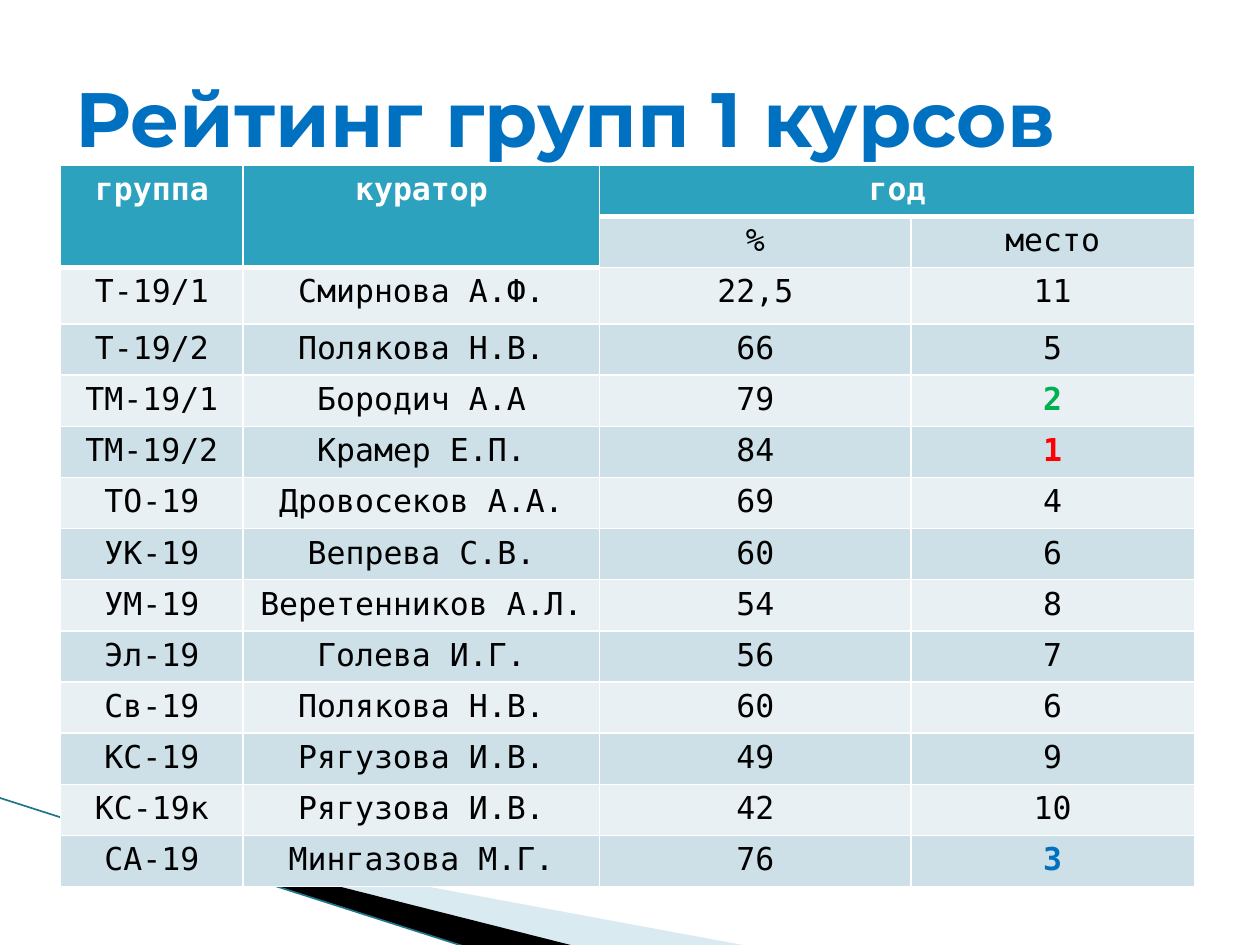
"""Builds the slide that ranks first-year groups by percentage and place."""
from lxml import etree
from pptx import Presentation
from pptx import util as u
from pptx.dml.color import RGBColor
from pptx.enum import shapes, text
from pptx.oxml.ns import qn

TITLE = "Рейтинг групп 1 курсов"
HEADER = ["группа", "куратор", "год", ""]
SUBHEADER = ["", "", "%", "место"]
RATING = [
    ("Т-19/1", "Смирнова А.Ф.", "22,5", "11"),
    ("Т-19/2", "Полякова Н.В.", "66", "5"),
    ("ТМ-19/1", "Бородич А.А", "79", "2"),
    ("ТМ-19/2", "Крамер Е.П.", "84", "1"),
    ("ТО-19", "Дровосеков А.А.", "69", "4"),
    ("УК-19", "Вепрева С.В.", "60", "6"),
    ("УМ-19", "Веретенников А.Л.", "54", "8"),
    ("Эл-19", "Голева И.Г.", "56", "7"),
    ("Св-19", "Полякова Н.В.", "60", "6"),
    ("КС-19", "Рягузова И.В.", "49", "9"),
    ("КС-19к", "Рягузова И.В.", "42", "10"),
    ("СА-19", "Мингазова М.Г.", "76", "3"),
]
MERGES = [((0, 0), (1, 0)), ((0, 1), (1, 1)), ((0, 2), (0, 3))]
COLUMNS = [1.45, 2.83, 2.47, 2.25]
TABLE_BOX = (0.48, 1.31, 9, 5.73)
FIRST_GROUP_ROW, FIRST_GROUP_HEIGHT = 2, 0.45
RIBBONS = [
    ((0.78, 5.47, 4.16, 1.58),
     [(0.55, 6.51), (5.95, 7.51), (4.56, 7.51), (0.55, 6.5)], "ribbon", 40),
    ((-0.06, 6.33, 4.16, 0.92),
     [(0.53, 6.49), (4.57, 7.51), (3.72, 7.52), (0.54, 6.5)], "text", 100),
]
EDGE = (-0.01, 6.33, 3.71, 7.52)
THEME = {
    "title_font": "Montserrat", "title_size": 44, "title": "0070C0",
    "table_font": "DejaVu Sans Mono", "table_size": 18,
    "header": "2DA2BF", "header_text": "FFFFFF", "text": "000000",
    "bands": ("E8F0F4", "CDE0E8"), "border": "FFFFFF",
    "places": {"1": "FF0000", "2": "00B050", "3": "0070C0"},
    "ribbon": "A0CBDC", "edge": "1F768C",
}


def add_run(paragraph, words, font, size, color, bold):
    run = paragraph.add_run()
    run.text = words
    run.font.name, run.font.size, run.font.bold = font, u.Pt(size), bold
    run.font.color.rgb = RGBColor.from_string(color)


def set_frame(ribbon, frame):
    left, top, width, height = map(u.Inches, frame)
    shift_x, shift_y = ribbon.left - left, ribbon.top - top
    outline = ribbon._element.spPr.find(".//" + qn("a:pathLst"))[0]
    outline.set("w", str(width))
    outline.set("h", str(height))
    for corner in outline.iter(qn("a:pt")):
        corner.set("x", str(int(corner.get("x")) + shift_x))
        corner.set("y", str(int(corner.get("y")) + shift_y))
    ribbon.left, ribbon.top, ribbon.width, ribbon.height = left, top, width, height


def add_ribbon(slide, frame, points, color, opacity):
    corners = [(u.Inches(x), u.Inches(y)) for x, y in points]
    builder = slide.shapes.build_freeform(*corners[0])
    builder.add_line_segments(corners[1:])
    ribbon = builder.convert_to_shape()
    set_frame(ribbon, frame)
    ribbon.shadow.inherit = False
    ribbon.line.fill.background()
    ribbon.fill.solid()
    ribbon.fill.fore_color.rgb = RGBColor.from_string(THEME[color])
    if opacity < 100:
        tint = ribbon._element.spPr.find(".//" + qn("a:srgbClr"))
        etree.SubElement(tint, qn("a:alpha"), val=str(opacity * 1000))


def add_edge(slide):
    edge = slide.shapes.add_connector(
        shapes.MSO_CONNECTOR.STRAIGHT, *map(u.Inches, EDGE))
    edge.line.width = u.Pt(0.95)
    edge.line.color.rgb = RGBColor.from_string(THEME["edge"])
    etree.SubElement(edge._element.spPr, qn("a:effectLst"))


def add_borders(cell, bottom):
    properties = cell._tc.get_or_add_tcPr()
    for side, points in (("L", 1), ("R", 1), ("T", 1), ("B", bottom)):
        border = etree.SubElement(properties, qn("a:ln" + side), w=str(u.Pt(points)))
        fill = etree.SubElement(border, qn("a:solidFill"))
        etree.SubElement(fill, qn("a:srgbClr"), val=THEME["border"])


def fill_cell(cell, words, row, column):
    header = row == 0 or (row == 1 and column < 2)
    add_borders(cell, 3 if header else 1)
    cell.fill.solid()
    cell.fill.fore_color.rgb = RGBColor.from_string(
        THEME["header"] if header else THEME["bands"][row % 2])
    place_color = THEME["places"].get(words) if column == 3 else None
    color = THEME["header_text"] if header else place_color or THEME["text"]
    if words:
        paragraph = cell.text_frame.paragraphs[0]
        paragraph.alignment = text.PP_ALIGN.CENTER
        add_run(paragraph, words, THEME["table_font"], THEME["table_size"],
                color, header or place_color is not None)


def add_rating(slide):
    rows = [HEADER, SUBHEADER, *RATING]
    rating = slide.shapes.add_table(
        len(rows), len(COLUMNS), *map(u.Inches, TABLE_BOX)).table
    for column, width in zip(rating.columns, COLUMNS):
        column.width = u.Inches(width)
    row_height = (TABLE_BOX[3] - FIRST_GROUP_HEIGHT) / (len(rows) - 1)
    for r, values in enumerate(rows):
        rating.rows[r].height = u.Inches(
            FIRST_GROUP_HEIGHT if r == FIRST_GROUP_ROW else row_height)
        for c, words in enumerate(values):
            fill_cell(rating.cell(r, c), words, r, c)
    for start, end in MERGES:
        rating.cell(*start).merge(rating.cell(*end))


def place_title(slide):
    title = slide.shapes.title
    title.left, title.top, title.width, title.height = map(
        u.Inches, (0.5, 0.3, 9, 1.25))
    title.text_frame.vertical_anchor = text.MSO_ANCHOR.MIDDLE
    paragraph = title.text_frame.paragraphs[0]
    paragraph.alignment = text.PP_ALIGN.LEFT
    add_run(paragraph, TITLE, THEME["title_font"], THEME["title_size"],
            THEME["title"], True)
    slide.shapes._spTree.append(title._element)


def main():
    deck = Presentation()
    deck.slide_width, deck.slide_height = u.Inches(10), u.Inches(7.5)
    slide = deck.slides.add_slide(deck.slide_layouts[5])
    for frame, points, color, opacity in RIBBONS:
        add_ribbon(slide, frame, points, color, opacity)
    add_edge(slide)
    add_rating(slide)
    place_title(slide)
    deck.save("out.pptx")


if __name__ == "__main__":
    main()
